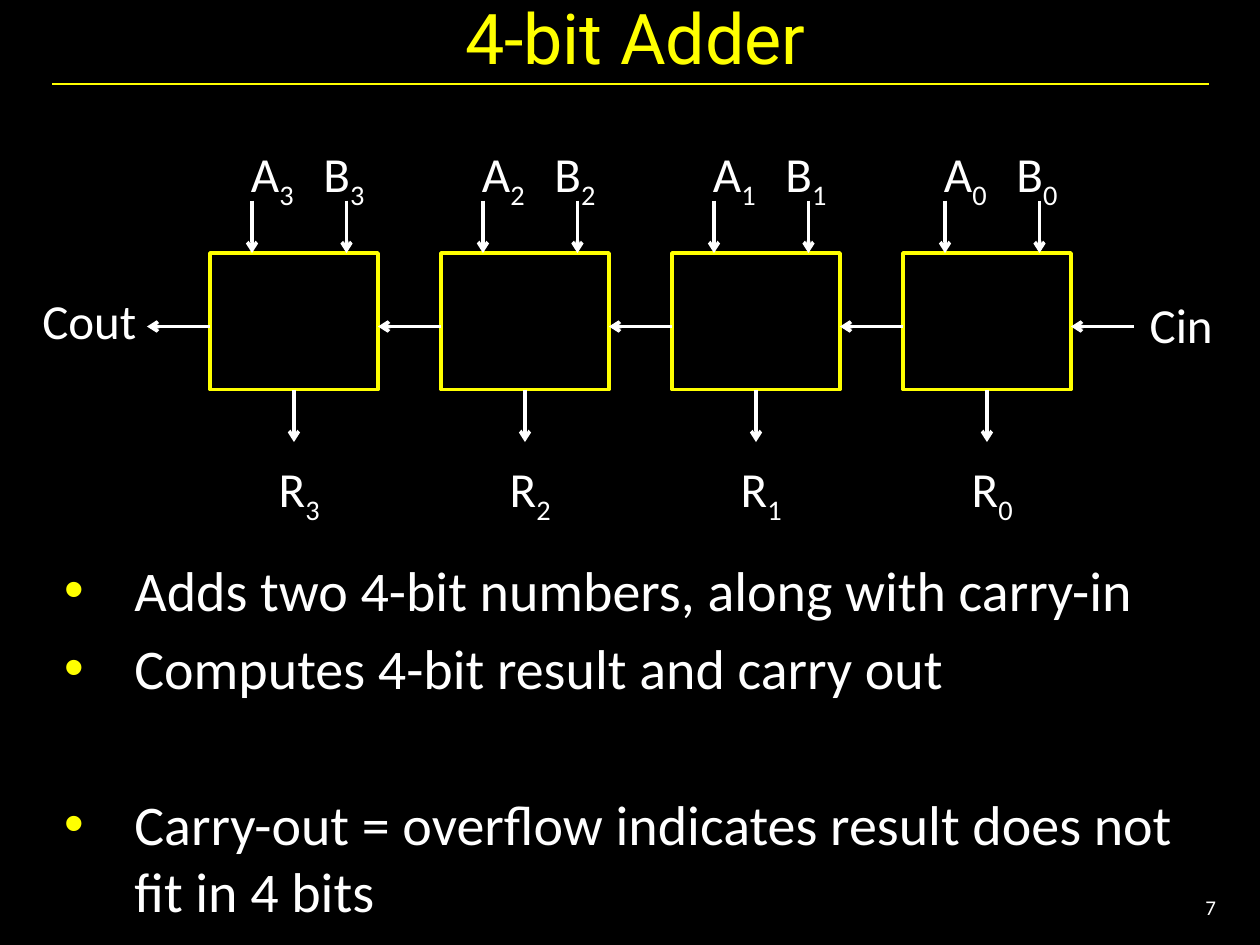
"""Build the 4-bit adder slide: a chain of four adders over three bullets."""
from dataclasses import dataclass

from lxml import etree
from pptx import Presentation
from pptx import util as u
from pptx.dml.color import RGBColor
from pptx.enum import shapes, text
from pptx.oxml import ns

BLACK = RGBColor(0x00, 0x00, 0x00)
WHITE = RGBColor(0xFF, 0xFF, 0xFF)
YELLOW = RGBColor(0xFF, 0xFF, 0x00)
SCALE = 7620
LEFT, PITCH, TOP = 200, 220, 241
WIDTH, HEIGHT, REACH = 160, 130, 50
CARRY, GAP = 311, 60
ALIGN = text.PP_ALIGN


@dataclass(frozen=True)
class Box:
    x: int
    y: int
    w: int
    h: int


@dataclass(frozen=True)
class Style:
    size: int = 28
    font: str = "Calibri"
    color: RGBColor = WHITE
    align: ALIGN = ALIGN.CENTER
    lead: float = 1.0


@dataclass(frozen=True)
class Run:
    words: str
    sub: bool = False


@dataclass(frozen=True)
class Label:
    box: Box
    runs: tuple[Run, ...]
    style: Style


@dataclass(frozen=True)
class Point:
    words: str
    before: int


HEAD = Style(40, "Roboto", YELLOW)
PLAIN = Style()
TALL = Style(lead=1.16)
PAIR = Style(align=ALIGN.LEFT, lead=1.16)
BODY = Style(32, align=ALIGN.LEFT)
PAGE = Style(12, align=ALIGN.RIGHT)

LABELS = (
    Label(Box(10, 271, 150, 68), (Run("Cout"),), PLAIN),
    Label(Box(1050, 266, 150, 73), (Run("Cin"),), TALL),
)
POINTS = (
    Point("Adds two 4-bit numbers, along with carry-in", 6),
    Point("Computes 4-bit result and carry out", 6),
    Point("Carry-out = overflow indicates result does not fit in 4 bits", 51),
)


def px(n: int) -> u.Emu:
    """Turn px into EMU."""
    return u.Emu(n * SCALE)


def add(tree, tag: str, **attrs: str):
    """Append a drawing element."""
    return etree.SubElement(tree, ns.qn(tag), attrs)


def frame(slide, box: Box):
    """Add a wrapping text box and return its frame."""
    item = slide.shapes.add_textbox(px(box.x), px(box.y), px(box.w), px(box.h))
    item.text_frame.word_wrap = True
    return item.text_frame


def write(para, runs: tuple[Run, ...], style: Style) -> None:
    """Fill a paragraph run by run."""
    para.alignment = style.align
    if style.lead != 1:
        para.line_spacing = style.lead
    for part in runs:
        run = para.add_run()
        run.text = part.words
        run.font.size = u.Pt(style.size)
        run.font.name = style.font
        run.font.color.rgb = style.color
        if part.sub:
            run.font._element.set("baseline", "-25000")


def label(slide, item: Label, middle: bool = False):
    """Add a one-line text and return its frame."""
    area = frame(slide, item.box)
    if middle:
        area.vertical_anchor = text.MSO_ANCHOR.MIDDLE
    write(area.paragraphs[0], item.runs, item.style)
    return area


def line(slide, start: tuple[int, int], end: tuple[int, int],
         color: RGBColor = WHITE, width: float = 2, arrow: bool = True):
    """Add a straight line, with an arrowhead at its end by default."""
    ends = [px(n) for n in (*start, *end)]
    item = slide.shapes.add_connector(shapes.MSO_CONNECTOR.STRAIGHT, *ends)
    item.line.width = u.Pt(width)
    item.line.color.rgb = color
    if arrow:
        add(item.line._get_or_add_ln(), "a:tailEnd", type="arrow")
    add(item._element.spPr, "a:effectLst")
    return item


def adder(slide, bit: int, x: int) -> None:
    """Draw one adder with its inputs and its result."""
    box = slide.shapes.add_shape(shapes.MSO_SHAPE.RECTANGLE,
                                 px(x), px(TOP), px(WIDTH), px(HEIGHT))
    box.shadow.inherit = False
    box.fill.background()
    box.line.color.rgb = YELLOW
    box.line.width = u.Pt(2)

    sub = Run(str(bit), True)
    area = label(slide, Label(Box(x - 70, 121, 330, 73),
                              (Run("A"), sub, Run("\tB"), sub), PAIR))
    area.margin_left = px(109)
    tabs = add(area.paragraphs[0]._p.get_or_add_pPr(), "a:tabLst")
    add(tabs, "a:tab", pos=str(px(69)), algn="l")
    for dx in (40, 130):
        line(slide, (x + dx, TOP - REACH), (x + dx, TOP))

    mid, base = x + WIDTH // 2, TOP + HEIGHT
    line(slide, (mid, base), (mid, base + REACH)).begin_connect(box, 2)
    label(slide, Label(Box(x + 30, base + REACH, 110, 73),
                       (Run("R"), sub), TALL))


def bullets(slide) -> None:
    """Add the bulleted text."""
    area = frame(slide, Box(61, 529, 1060, 401))
    area.margin_left = area.margin_right = 0
    area.margin_top = area.margin_bottom = 0
    for i, point in enumerate(POINTS):
        para = area.add_paragraph() if i else area.paragraphs[0]
        write(para, (Run(point.words),), BODY)
        para.space_before = u.Pt(point.before)
        props = para._p.get_or_add_pPr()
        props.set("marL", str(px(67)))
        props.set("indent", str(px(-67)))
        add(add(props, "a:buClr"), "a:srgbClr", val=str(YELLOW))
        add(props, "a:buFont", typeface="Arial")
        add(props, "a:buChar", char="•")


def main() -> None:
    """Build and save the slide."""
    deck = Presentation()
    deck.slide_width, deck.slide_height = px(1200), px(900)
    slide = deck.slides.add_slide(deck.slide_layouts[6])
    slide.background.fill.solid()
    slide.background.fill.fore_color.rgb = BLACK

    line(slide, (50, 80), (1151, 80), YELLOW, 0.75, False)
    label(slide, Label(Box(1070, 840, 100, 48), (Run("7"),), PAGE), True)
    label(slide, Label(Box(50, 0, 1110, 70), (Run("4-bit Adder"),), HEAD), True)
    bullets(slide)
    for i in range(4):
        adder(slide, 3 - i, LEFT + i * PITCH)
    for i in range(5):
        x = LEFT + i * PITCH
        line(slide, (x, CARRY), (x - GAP, CARRY))
    for item in LABELS:
        label(slide, item)
    deck.save("out.pptx")


if __name__ == "__main__":
    main()
